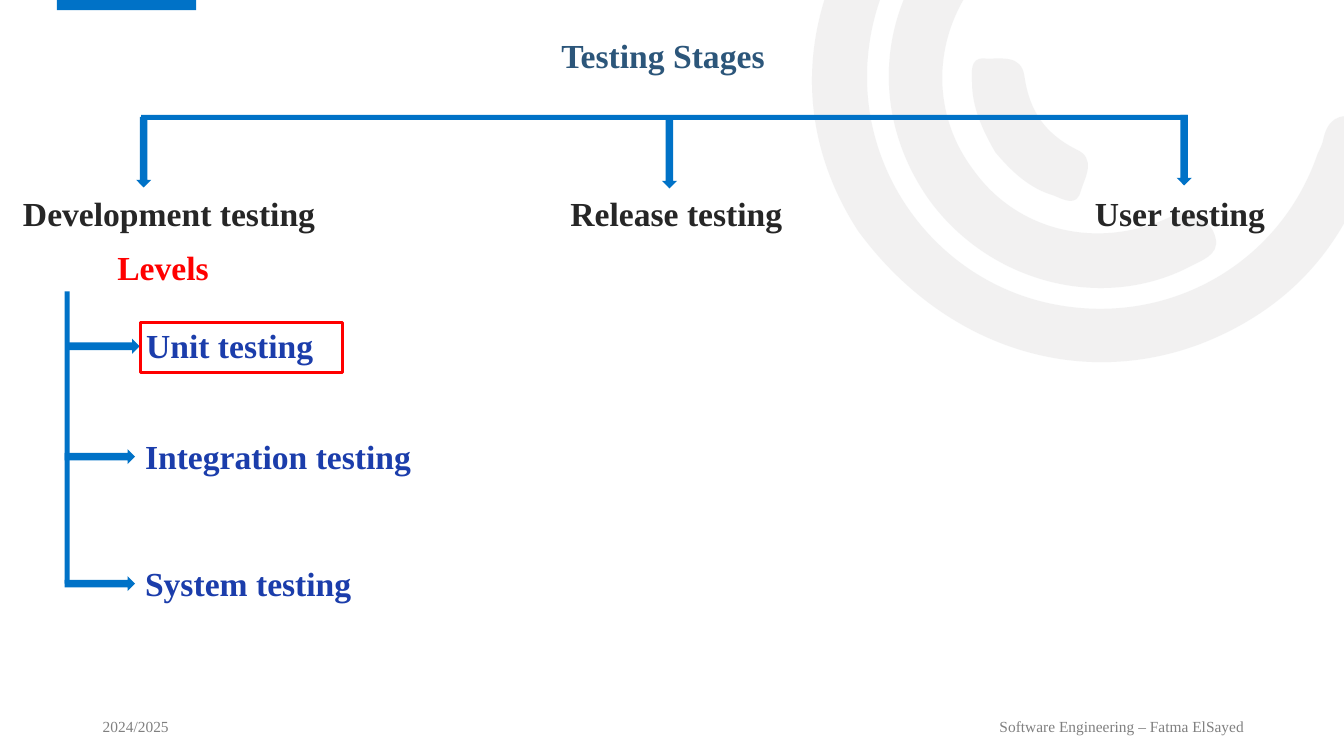
import math

import pptx
import pptx.util
import pptx.dml.color
import pptx.enum.shapes
import pptx.enum.text
import pptx.oxml
import pptx.oxml.ns

COLORS = {
    "blue": "0072C7", "title": "2C567A", "stage": "262626", "level": "1B3DAB",
    "red": "FF0000", "footer": "808080", "swirl": "E7E6E6",
}
FONT = "Times New Roman"
SHAPES = pptx.enum.shapes.MSO_SHAPE
NAMESPACE = pptx.oxml.ns.nsdecls("a")

presentation = pptx.Presentation()
presentation.slide_width = pptx.util.Inches(13.33)
presentation.slide_height = pptx.util.Inches(7.5)
slide = presentation.slides.add_slide(presentation.slide_layouts[6])

# All lengths are columns and rows of a square grid, 75 rows high
CELL = presentation.slide_height / 75


def add_bar(kind, left, top, width, height):
    shape = slide.shapes.add_shape(
        kind, *[round(length * CELL) for length in (left, top, width, height)])
    shape.shadow.inherit = False
    shape.fill.solid()
    shape.fill.fore_color.rgb = pptx.dml.color.RGBColor.from_string(COLORS["blue"])
    shape.line.fill.background()
    return shape


def add_label(text, left, top, width, color, size=24, height=5):
    box = slide.shapes.add_textbox(
        *[round(length * CELL) for length in (left, top, width, height)])
    box.text_frame.word_wrap = False
    box.text_frame.auto_size = pptx.enum.text.MSO_AUTO_SIZE.SHAPE_TO_FIT_TEXT
    paragraph = box.text_frame.paragraphs[0]
    paragraph.text = text
    paragraph.font.name = FONT
    paragraph.font.size = pptx.util.Pt(size)
    paragraph.font.bold = size == 24
    paragraph.font.color.rgb = pptx.dml.color.RGBColor.from_string(COLORS[color])
    return paragraph


# Background swirl: box, start point and cubic curves, as seen after turning
TURN = 144.2
swirl = [
    ((81.3, -20.2, 48.5, 60), (85.1, 22.9), [
        (79.9, 14.9, 78.7, 5, 83.8, -5), (89, -15.2, 97.6, -20.3, 109, -20.7),
        (110.5, -20.7, 112.1, -21, 113.1, -19.5), (114.4, -17.5, 112.7, -15.4, 109.8, -15.4),
        (96.7, -15.4, 86.5, -5.9, 86, 6.8), (85.6, 18.1, 93.6, 28.1, 104.6, 30.2),
        (116, 32.4, 127, 26.1, 130.7, 15.2), (130.9, 14.8, 131.1, 14.4, 131.2, 14),
        (131.6, 11.9, 132.7, 11.1, 134.9, 11.7), (137.3, 12.4, 136.7, 14.1, 136.1, 15.6),
        (133.4, 24.5, 127.8, 30.7, 119.1, 34.1), (107, 38.7, 93.6, 34.5, 85.1, 22.9)]),
    ((90.1, -7.8, 21.3, 42.6), (92.2, 19.9), [
        (86.2, 11.5, 86.9, 0.7, 94, -6.8), (95.1, -7.9, 96.2, -9.5, 98, -7.8),
        (99.5, -6.4, 99.7, -5, 97.9, -3.2), (92.5, 2.6, 92, 10.8, 96.5, 16.8),
        (100.8, 22.9, 108.8, 24.9, 116.1, 21.5), (118.2, 20.5, 119.3, 21.2, 120.3, 22.9),
        (121.3, 25, 119.7, 25.6, 118.3, 26.3), (109.6, 31, 98.3, 28.2, 92.2, 19.9)]),
    ((98, 3.7, 7.8, 18.3), (98.7, 15.1), [
        (97.5, 13, 96.4, 10.7, 96.4, 8.2), (96.4, 7.3, 96.1, 5.7, 97.6, 5.8),
        (99.2, 5.9, 101.3, 5.3, 101.6, 7.6), (102.1, 11, 103.6, 13.2, 106.7, 14.8),
        (108.8, 15.7, 107.6, 17.6, 107.2, 18.9), (106.8, 20.6, 105.5, 19.8, 104.5, 19.4),
        (102.1, 18.7, 100.3, 17, 98.7, 15.1)]),
]
cosine, sine = math.cos(math.radians(TURN)), math.sin(math.radians(TURN))
for (left, top, width, height), start, curves in swirl:
    builder = slide.shapes.build_freeform(*start, scale=CELL)
    builder.add_line_segments([curve[4:] for curve in curves], close=True)
    shape = builder.convert_to_shape()
    shape.left, shape.top, shape.width, shape.height = [
        round(length * CELL) for length in (left, top, width, height)]
    shape.rotation = TURN
    shape.shadow.inherit = False
    shape.fill.solid()
    shape.fill.fore_color.rgb = pptx.dml.color.RGBColor.from_string(COLORS["swirl"])
    shape.line.fill.background()
    color = shape._element.spPr.find(".//" + pptx.oxml.ns.qn("a:srgbClr"))
    color.append(pptx.oxml.parse_xml(f'<a:alpha {NAMESPACE} val="53000"/>'))

    # Curves in the frame of the unturned box, in hundredths of a cell
    commands = []
    for name, numbers in [("moveTo", start)] + [("cubicBezTo", curve) for curve in curves]:
        points = ""
        for x, y in zip(numbers[::2], numbers[1::2]):
            across, down = x - left - width / 2, y - top - height / 2
            local_x = round(100 * (width / 2 + across * cosine + down * sine))
            local_y = round(100 * (height / 2 - across * sine + down * cosine))
            points += f'<a:pt x="{local_x}" y="{local_y}"/>'
        commands.append(f"<a:{name} {NAMESPACE}>{points}</a:{name}>")
    outline = shape._element.spPr.find(".//" + pptx.oxml.ns.qn("a:path"))
    for child in list(outline):
        outline.remove(child)
    outline.set("w", str(round(width * 100)))
    outline.set("h", str(round(height * 100)))
    for command in commands + [f"<a:close {NAMESPACE}/>"]:
        outline.append(pptx.oxml.parse_xml(command))

# Top accent, title and footer
add_bar(SHAPES.RECTANGLE, 5.65, -0.2, 13.8, 1.2)
add_label("Testing Stages", 54.7, 3, 22.4, "title")
add_label("2024/2025", 9.2, 70.65, 8.6, "footer", 11, 2.9)
add_label("Software Engineering – Fatma ElSayed", 98.15, 70.65, 26.4, "footer", 11, 2.9)

# Stages hang from a horizontal bar
add_bar(SHAPES.RECTANGLE, 14, 11.4, 103.8, 0.5)
stages = [
    ("Development testing", -1.8, 34.4, 13.5, 11.6),
    ("Release testing", 52.5, 26.4, 65.65, 11.7),
    ("User testing", 104.5, 22.2, 116.7, 11.4),
]
for text, left, width, arrow_left, arrow_top in stages:
    add_bar(SHAPES.DOWN_ARROW, arrow_left, arrow_top, 1.5, 7)
    paragraph = add_label(text, left, 18.65, width, "stage")
    paragraph.alignment = pptx.enum.text.PP_ALIGN.JUSTIFY
    paragraph.space_after = pptx.util.Pt(12)
    paragraph._p.get_or_add_pPr().set("marL", str(round(3.1 * CELL)))
    paragraph._p.get_or_add_pPr().set("indent", "0")

# Levels branch from a vertical bar
add_label("Levels", 10.65, 24, 11.2, "red")
add_bar(SHAPES.RECTANGLE, 6.4, 28.9, 0.5, 29)
levels = [
    ("Unit testing", 13.5, 31.7, 18.8, 9.6, 30.85),
    ("Integration testing", 13.4, 42.8, 28.7, 9.15, 41.8),
    ("System testing", 13.4, 55.4, 22.7, 9.15, 54.4),
]
for text, left, top, width, arrow_left, arrow_top in levels:
    add_bar(SHAPES.DOWN_ARROW, arrow_left, arrow_top, 1.5, 7).rotation = 270
    add_label(text, left, top, width, "level")

# Red frame marks the current level
frame = add_bar(SHAPES.RECTANGLE, 13.95, 32, 20.05, 5)
frame.fill.background()
frame.line.color.rgb = pptx.dml.color.RGBColor.from_string(COLORS["red"])
frame.line.width = pptx.util.Pt(2.25)

presentation.save("out.pptx")
